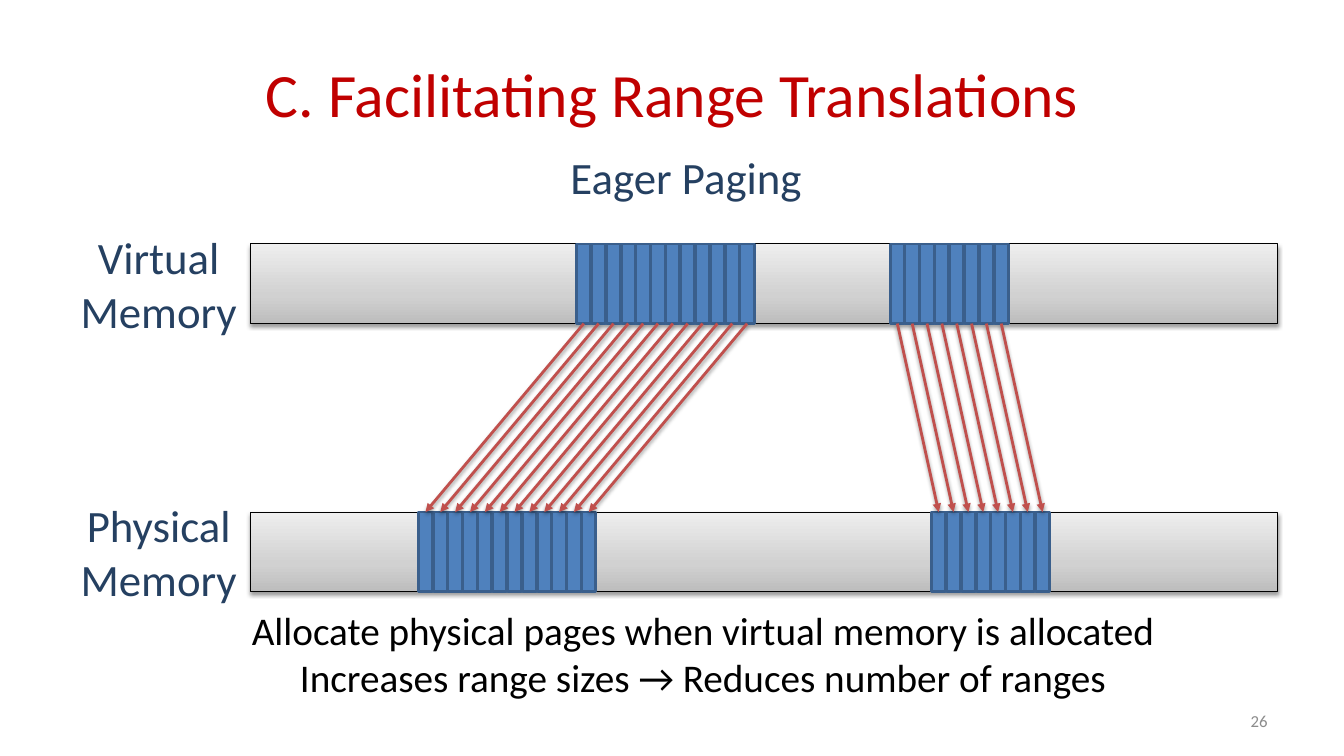
import copy
from dataclasses import dataclass
import lxml.etree
import pptx
import pptx.util
import pptx.oxml.ns
import pptx.dml.color
import pptx.enum.shapes
import pptx.enum.text

Inches = pptx.util.Inches
Pt = pptx.util.Pt
qn = pptx.oxml.ns.qn
Align = pptx.enum.text.PP_ALIGN
Anchor = pptx.enum.text.MSO_ANCHOR


@dataclass(frozen=True)
class Theme:
    font: str = "Calibri"
    title: str = "C00000"
    label: str = "254061"
    body: str = "000000"
    number: str = "8C8C8C"
    page: str = "4F81BD"
    edge: str = "3A5F8C"
    arrow: str = "C0504D"
    frame: str = "000000"
    shade: tuple = ((0, "BDBDBD"), (0.35, "D1D1D1"), (1, "EEEEEE"))
    title_size: int = 44
    label_size: int = 32
    body_size: int = 28
    number_size: int = 12


@dataclass(frozen=True)
class Label:
    box: tuple
    lines: tuple
    size: int
    color: str
    align: Align = Align.CENTER
    anchor: Anchor = Anchor.TOP


@dataclass(frozen=True)
class Range:
    """Pages next to each other, mapped one to one between the bars."""
    virtual: float
    actual: float
    count: int


THEME = Theme()
BAR_LEFT, BAR_WIDTH, BAR_HEIGHT = 2.48, 10.19, 0.79
VIRTUAL_TOP, ACTUAL_TOP = 2.42, 5.08
PAGE_WIDTH, PAGE_STEP = 0.14, 1.62 / 11
RANGES = (Range(5.72, 4.15, 12), Range(8.83, 9.24, 8))

LABELS = (
    Label((0.67, 0.3, 12, 1.25), ("C. Facilitating Range Translations",),
          THEME.title_size, THEME.title, anchor=Anchor.MIDDLE),
    Label((9.56, 6.95, 3.11, 0.4), ("26",), THEME.number_size, THEME.number,
          Align.RIGHT, Anchor.MIDDLE),
    Label((0.67, 2.23, 1.81, 1.18), ("Virtual Memory",),
          THEME.label_size, THEME.label),
    Label((0.67, 4.89, 1.81, 1.18), ("Physical Memory",),
          THEME.label_size, THEME.label),
    Label((1.21, 5.97, 11.52, 1.04),
          ("Allocate physical pages when virtual memory is allocated",
           "Increases range sizes → Reduces number of ranges"),
          THEME.body_size, THEME.body),
    Label((5.56, 1.44, 2.52, 0.64), ("Eager Paging",),
          THEME.label_size, THEME.label, Align.LEFT),
)


def rgb(code: str) -> pptx.dml.color.RGBColor:
    return pptx.dml.color.RGBColor.from_string(code)


def apply(target, values: dict) -> None:
    for name, value in values.items():
        setattr(target, name, value)


def stroke(line, color: str, width: float) -> None:
    line.color.rgb = rgb(color)
    line.width = Pt(width)


def add_shadow(props) -> None:
    """Put a soft drop shadow in the effect list of a shape or line."""
    effects = props.find(qn("a:effectLst"))
    if effects is None:
        effects = lxml.etree.SubElement(props, qn("a:effectLst"))
    outer = lxml.etree.SubElement(
        effects, qn("a:outerShdw"), blurRad=str(Pt(3.1)), dist=str(Pt(1.6)),
        dir="5400000", rotWithShape="0")
    black = lxml.etree.SubElement(outer, qn("a:srgbClr"), val="000000")
    lxml.etree.SubElement(black, qn("a:alpha"), val="38000")


def add_label(slide, label: Label) -> None:
    frame = slide.shapes.add_textbox(*map(Inches, label.box)).text_frame
    apply(frame, {"word_wrap": True, "vertical_anchor": label.anchor})
    frame.text = "\n".join(label.lines)
    for para in frame.paragraphs:
        para.alignment = label.align
        font = para.runs[0].font
        apply(font, {"name": THEME.font, "size": Pt(label.size)})
        font.color.rgb = rgb(label.color)


def add_rect(slide, left: float, top: float, width: float):
    rect = slide.shapes.add_shape(
        pptx.enum.shapes.MSO_SHAPE.RECTANGLE,
        *map(Inches, (left, top, width, BAR_HEIGHT)))
    rect.shadow.inherit = False
    return rect


def add_bar(slide, top: float) -> None:
    bar = add_rect(slide, BAR_LEFT, top, BAR_WIDTH)
    bar.fill.gradient()
    bar.fill.gradient_angle = 90
    stops = bar.element.spPr.find(".//" + qn("a:gsLst"))
    stops.insert(1, copy.deepcopy(stops[0]))
    for stop, (place, color) in zip(bar.fill.gradient_stops, THEME.shade):
        stop.position = place
        stop.color.rgb = rgb(color)
    stroke(bar.line, THEME.frame, 0.75)
    add_shadow(bar.element.spPr)


def add_pages(slide, left: float, top: float, count: int) -> list:
    pages = []
    for index in range(count):
        page = add_rect(slide, left + index * PAGE_STEP, top, PAGE_WIDTH)
        page.fill.solid()
        page.fill.fore_color.rgb = rgb(THEME.page)
        stroke(page.line, THEME.edge, 2)
        pages.append(page)
    return pages


def add_arrow(slide, source, target) -> None:
    arrow = slide.shapes.add_connector(
        pptx.enum.shapes.MSO_CONNECTOR.STRAIGHT, 0, 0, 0, 0)
    arrow.begin_connect(source, 2)
    arrow.end_connect(target, 0)
    stroke(arrow.line, THEME.arrow, 2)
    props = arrow.element.spPr
    lxml.etree.SubElement(props.find(qn("a:ln")), qn("a:tailEnd"),
                          type="triangle")
    add_shadow(props)


def main() -> None:
    deck = pptx.Presentation()
    apply(deck, {"slide_width": Inches(13.33), "slide_height": Inches(7.5)})
    slide = deck.slides.add_slide(deck.slide_layouts[6])

    # Memory bars
    for top in (VIRTUAL_TOP, ACTUAL_TOP):
        add_bar(slide, top)

    # Pages, then the arrows that map them
    pairs = []
    for span in RANGES:
        targets = add_pages(slide, span.actual, ACTUAL_TOP, span.count)
        sources = add_pages(slide, span.virtual, VIRTUAL_TOP, span.count)
        pairs += zip(sources, targets)
    for source, target in pairs:
        add_arrow(slide, source, target)

    # Title, labels and notes below the bars
    for label in LABELS:
        add_label(slide, label)

    deck.save("out.pptx")


if __name__ == "__main__":
    main()
